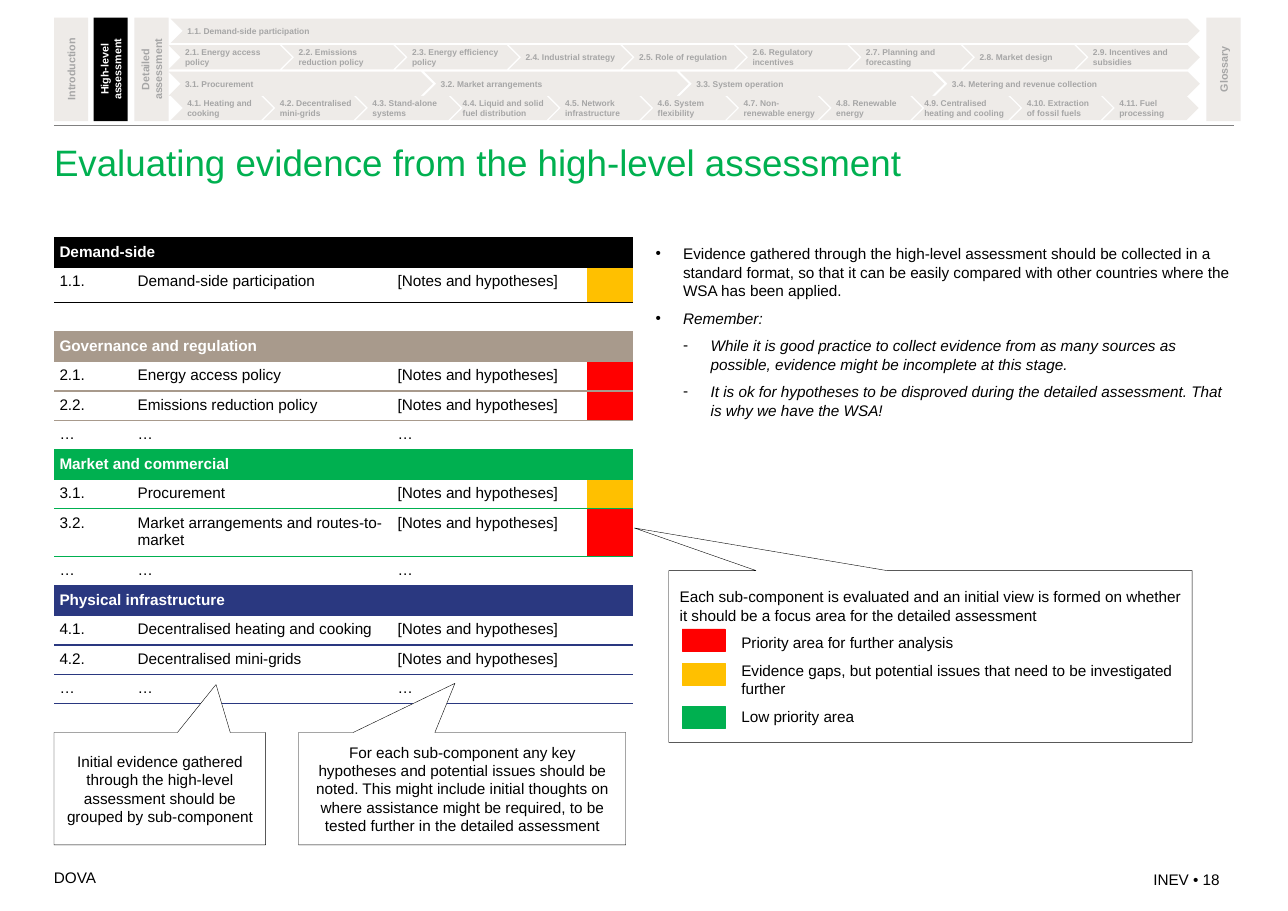
"""Build the slide on evaluating evidence from the high-level assessment."""
from dataclasses import dataclass

from lxml import etree
from pptx import Presentation
from pptx import util as u
from pptx.dml import color as c
from pptx.enum import shapes, text
from pptx.oxml import ns


@dataclass(frozen=True)
class Theme:
    font: str = "Arial"
    black: str = "000000"
    white: str = "FFFFFF"
    rule: str = "808080"
    tab: str = "EEEBE8"
    muted: str = "A6A6A6"
    taupe: str = "A89A8C"
    green: str = "00B050"
    navy: str = "2A3880"
    red: str = "FF0000"
    amber: str = "FFC000"
    title_size: float = 24
    body_size: float = 10
    tab_size: float = 7
    step_size: float = 5.5


THEME = Theme()
NOTES = "[Notes and hypotheses]"
MORE = ("…", "…", "…", None)
SECTIONS = [
    ("Demand-side", THEME.black, [
        ("1.1.", "Demand-side participation", NOTES, THEME.amber), ("", "", "", None)]),
    ("Governance and regulation", THEME.taupe, [
        ("2.1.", "Energy access policy", NOTES, THEME.red),
        ("2.2.", "Emissions reduction policy", NOTES, THEME.red), MORE]),
    ("Market and commercial", THEME.green, [
        ("3.1.", "Procurement", NOTES, THEME.amber),
        ("3.2.", "Market arrangements and routes-to-market", NOTES, THEME.red), MORE]),
    ("Physical infrastructure", THEME.navy, [
        ("4.1.", "Decentralised heating and cooking", NOTES, None),
        ("4.2.", "Decentralised mini-grids", NOTES, None), MORE]),
]
TABS = [("Introduction", 0.49), ("High-level assessment", 0.85),
        ("Detailed assessment", 1.22), ("Glossary", 10.95)]
STEP_ROWS = [
    (1.55, 0.17, 0, [9.34], ["1.1. Demand-side participation"]),
    (1.53, 0.41, 0.09, [1.12] * 9, [
        "2.1. Energy access policy", "2.2. Emissions reduction policy",
        "2.3. Energy efficiency policy", "2.4. Industrial strategy",
        "2.5. Role of regulation", "2.6. Regulatory incentives",
        "2.7. Planning and forecasting", "2.8. Market design",
        "2.9. Incentives and subsidies"]),
    (1.53, 0.65, 0.08, [2.4] * 4, [
        "3.1. Procurement", "3.2. Market arrangements", "3.3. System operation",
        "3.4. Metering and revenue collection"]),
    (1.55, 0.87, 0.09,
     [0.93, 0.93, 0.95, 0.98, 0.93, 0.87, 0.93, 0.93, 0.98, 0.93, 0.87], [
         "4.1. Heating and cooking", "4.2. Decentralised mini-grids",
         "4.3. Stand-alone systems", "4.4. Liquid and solid fuel distribution",
         "4.5. Network infrastructure", "4.6. System flexibility",
         "4.7. Non-renewable energy", "4.8. Renewable energy",
         "4.9. Centralised heating and cooling", "4.10. Extraction of fossil fuels",
         "4.11. Fuel processing"]),
]
WIDE_STEP = 0.98
TIGHT_RIGHT = ("4.2. Decentralised mini-grids", "4.7. Non-renewable energy")
EVIDENCE = [
    (1, False, "Evidence gathered through the high-level assessment should be collected in a "
               "standard format, so that it can be easily compared with other countries where "
               "the WSA has been applied."),
    (1, True, "Remember:"),
    (2, True, "While it is good practice to collect evidence from as many sources as possible, "
              "evidence might be incomplete at this stage."),
    (2, True, "It is ok for hypotheses to be disproved during the detailed assessment. "
              "That is why we have the WSA!"),
]
GROUPING = ("Initial evidence gathered through the high-level assessment should be grouped "
            "by sub-component")
HYPOTHESES = ("For each sub-component any key hypotheses and potential issues should be noted. "
              "This might include initial thoughts on where assistance might be required, to be "
              "tested further in the detailed assessment")
LEGEND = ["Each sub-component is evaluated and an initial view is formed on whether it should "
          "be a focus area for the detailed assessment", "Priority area for further analysis",
          "Evidence gaps, but potential issues that need to be investigated further",
          "Low priority area"]
SWATCHES = [(5.71, THEME.red), (6.02, THEME.amber), (6.41, THEME.green)]


def rgb(value):
    return c.RGBColor.from_string(value)


def box(*lengths):
    return [u.Inches(length) for length in lengths]


def set_insets(frame, left, top, right, bottom):
    frame.margin_left, frame.margin_top, frame.margin_right, frame.margin_bottom = box(
        left, top, right, bottom)


def style_paragraph(paragraph, size=THEME.body_size, color=THEME.black, bold=False,
                    italic=False, align=text.PP_ALIGN.LEFT):
    paragraph.alignment = align
    for run in paragraph.runs:
        font = run.font
        font.name, font.size, font.bold, font.italic = THEME.font, u.Pt(size), bold, italic
        font.color.rgb = rgb(color)


def set_indent(paragraph, left, first):
    properties = paragraph._p.get_or_add_pPr()
    properties.set("marL", str(u.Inches(left)))
    properties.set("indent", str(u.Inches(first)))
    return properties


def add_box(slide, kind, place, fill, line=None):
    shape = slide.shapes.add_shape(kind, *box(*place))
    shape.shadow.inherit = False
    shape.fill.solid()
    shape.fill.fore_color.rgb = rgb(fill)
    if line:
        shape.line.color.rgb = rgb(line)
        shape.line.width = u.Pt(0.25)
    else:
        shape.line.fill.background()
    shape.text_frame.vertical_anchor = text.MSO_ANCHOR.MIDDLE
    return shape


def add_tab(slide, label, left, active):
    shape = add_box(slide, shapes.MSO_SHAPE.RECTANGLE, (left, 0.16, 0.31, 0.94),
                    THEME.black if active else THEME.tab)
    shape.text_frame.text = label
    shape.text_frame._txBody.bodyPr.set("vert", "vert270")
    style_paragraph(shape.text_frame.paragraphs[0], THEME.tab_size,
                    THEME.white if active else THEME.muted, True, align=text.PP_ALIGN.CENTER)


def add_step_row(slide, left, top, overlap, widths, labels):
    for label, width in zip(labels, widths):
        shape = add_box(slide, shapes.MSO_SHAPE.CHEVRON, (left, top, width, 0.22), THEME.tab)
        wide = width == WIDE_STEP
        set_insets(shape.text_frame, 0 if wide else 0.04, 0.04,
                   0 if wide or label in TIGHT_RIGHT else 0.04, 0.04)
        shape.text_frame.text = label
        style_paragraph(shape.text_frame.paragraphs[0], THEME.step_size, THEME.muted, True)
        left += width - overlap


def add_rule(slide):
    line = slide.shapes.add_connector(shapes.MSO_CONNECTOR.STRAIGHT, *box(0.49, 1.14, 11.2, 1.14))
    line.line.color.rgb = rgb(THEME.rule)
    line.line.width = u.Pt(0.75)
    etree.SubElement(line._element.spPr, ns.qn("a:effectLst"))


def add_footer(slide, label, place, align):
    frame = slide.shapes.add_textbox(*box(*place)).text_frame
    frame.word_wrap = True
    set_insets(frame, 0, 0, 0, 0)
    frame.text = label
    style_paragraph(frame.paragraphs[0], align=align)


def fill_placeholder(placeholder, place, content):
    placeholder.left, placeholder.top, placeholder.width, placeholder.height = box(*place)
    frame = placeholder.text_frame
    frame.text = content
    frame.auto_size = text.MSO_AUTO_SIZE.NONE
    frame.vertical_anchor = text.MSO_ANCHOR.TOP
    set_insets(frame, 0, 0, 0, 0)
    return frame.paragraphs


def fill_evidence(placeholder):
    paragraphs = fill_placeholder(placeholder, (5.95, 2.22, 5.24, 4.84),
                                  "\n".join(content for _, _, content in EVIDENCE))
    for paragraph, (level, italic, _) in zip(paragraphs, EVIDENCE):
        style_paragraph(paragraph, italic=italic)
        paragraph.level = level
        paragraph.space_before, paragraph.space_after = u.Pt(0), u.Pt(6)
        properties = set_indent(paragraph, 0.25 * level, -0.25)
        bullet_color = etree.SubElement(properties, ns.qn("a:buClr"))
        etree.SubElement(bullet_color, ns.qn("a:srgbClr"), val=THEME.black)
        etree.SubElement(properties, ns.qn("a:buChar"), char="•" if level == 1 else "-")


def format_cell(cell, content, fill, top, bottom, heading):
    cell.text_frame.text = content
    set_insets(cell, 0.05, 0.05, 0.05, 0.05)
    paragraph = cell.text_frame.paragraphs[0]
    style_paragraph(paragraph, color=THEME.white if heading else THEME.black, bold=heading)
    if not content:
        etree.SubElement(paragraph._p, ns.qn("a:endParaRPr"), sz=str(THEME.body_size * 100))
    properties = cell._tc.get_or_add_tcPr()
    for side, color in (("L", None), ("R", None), ("T", top), ("B", bottom)):
        border = etree.SubElement(properties, ns.qn(f"a:ln{side}"), w=str(u.Pt(1)))
        paint = etree.SubElement(border, ns.qn("a:solidFill" if color else "a:noFill"))
        if color:
            etree.SubElement(paint, ns.qn("a:srgbClr"), val=color)
    if fill:
        cell.fill.solid()
        cell.fill.fore_color.rgb = rgb(fill)
    else:
        cell.fill.background()


def add_evidence_table(slide):
    rows = []
    for index, (heading, color, items) in enumerate(SECTIONS):
        following = SECTIONS[min(index + 1, len(SECTIONS) - 1)][1]
        rows.append(((heading, "", "", color), color, True))
        rows += [(item, color, False) for item in items[:-1]]
        rows.append((items[-1], following, False))
    table = slide.shapes.add_table(len(rows), 4, *box(0.49, 2.16, 5.26, 4.05)).table
    table.first_row = table.horz_banding = False
    for column, width in zip(table.columns, (0.71, 2.36, 1.77, 0.42)):
        column.width = u.Inches(width)
    top = THEME.black
    for index, (values, bottom, heading) in enumerate(rows):
        table.rows[index].height = u.Inches(0.32 if values[0] in ("1.1.", "3.2.") else 0.25)
        for column, content in enumerate((*values[:3], "")):
            fill = values[3] if heading or column == 3 else None
            format_cell(table.cell(index, column), content, fill, top, bottom, heading)
        if heading:
            table.cell(index, 0).merge(table.cell(index, 3))
        top = bottom


def add_callout(slide, place, pointer, content, align=text.PP_ALIGN.CENTER):
    shape = add_box(slide, shapes.MSO_SHAPE.RECTANGULAR_CALLOUT, place, THEME.white, THEME.black)
    shape.adjustments[0], shape.adjustments[1] = pointer
    shape.text_frame.text = content
    for paragraph in shape.text_frame.paragraphs:
        style_paragraph(paragraph, align=align)
    return shape.text_frame.paragraphs


def add_legend(slide):
    paragraphs = add_callout(slide, (6.07, 5.18, 4.75, 1.56), (-0.566, -0.748),
                             "\n".join(LEGEND), text.PP_ALIGN.LEFT)
    for index, paragraph in enumerate(paragraphs):
        paragraph.space_before = paragraph.space_after = u.Pt(3)
        if index:
            paragraph.level = 1
            set_indent(paragraph, 0.56, 0)
    for top, color in SWATCHES:
        add_box(slide, shapes.MSO_SHAPE.RECTANGLE, (6.19, top, 0.39, 0.2), color, color)


def main():
    presentation = Presentation()
    presentation.slide_width, presentation.slide_height = box(11.69, 8.27)
    slide = presentation.slides.add_slide(presentation.slide_layouts[1])
    add_footer(slide, "DOVA", (0.49, 7.88, 3.37, 0.16), text.PP_ALIGN.LEFT)
    add_footer(slide, "INEV • 18", (9.46, 7.9, 1.61, 0.17), text.PP_ALIGN.RIGHT)
    add_rule(slide)
    for label, left in TABS:
        add_tab(slide, label, left, label == "High-level assessment")
    for row in STEP_ROWS:
        add_step_row(slide, *row)
    title = fill_placeholder(slide.shapes.title, (0.49, 1.27, 10.71, 0.71),
                             "Evaluating evidence from the high-level assessment")
    style_paragraph(title[0], THEME.title_size, THEME.green)
    fill_evidence(slide.placeholders[1])
    add_evidence_table(slide)
    add_callout(slide, (0.49, 6.65, 1.92, 1.02), (0.266, -0.928), GROUPING)
    add_callout(slide, (2.71, 6.65, 2.97, 1.02), (-0.022, -0.938), HYPOTHESES)
    add_legend(slide)
    presentation.save("out.pptx")


if __name__ == "__main__":
    main()
